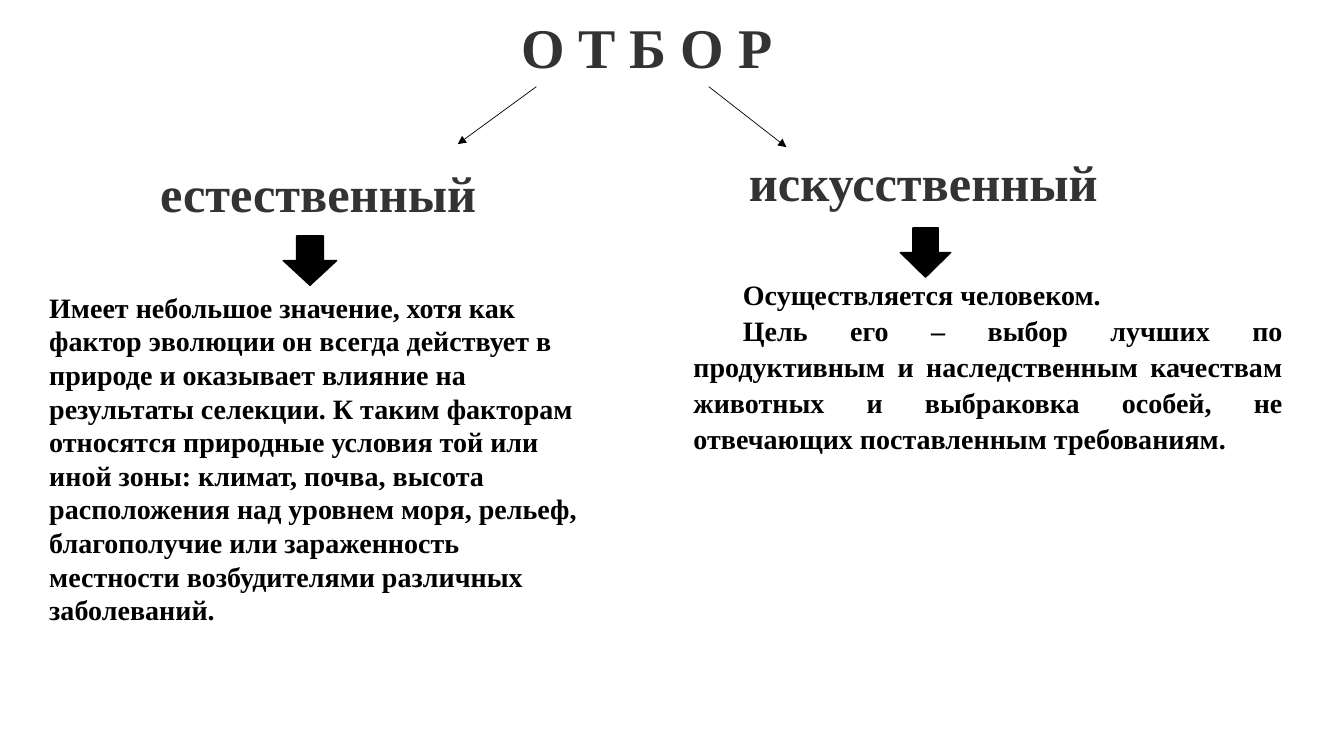
from lxml import etree
from pptx import Presentation
from pptx.dml.color import RGBColor
from pptx.enum import shapes, text
from pptx.oxml.ns import qn
from pptx.util import Inches, Pt

# Content: boxes are (left, top, width, height) in inches
TITLE = ("О Т Б О Р", (5.07, 0.08, 2.72, 0.77))
BRANCHES = [
    {
        "name": "естественный",
        "name_box": (1.49, 1.56, 3.37, 0.71),
        "link": (5.32, 0.86, 4.54, 1.43),
        "arrow": (2.81, 2.34, 0.53, 0.49),
        "body_box": (0.39, 2.83, 5.57, 3.47),
        "justified": False,
        "body": [
            "Имеет небольшое значение, хотя как фактор эволюции он всегда "
            "действует в природе и оказывает влияние на результаты селекции. "
            "К таким факторам относятся природные условия той или иной зоны: "
            "климат, почва, высота расположения над уровнем моря, рельеф, "
            "благополучие или зараженность местности возбудителями различных "
            "заболеваний.",
        ],
    },
    {
        "name": "искусственный",
        "name_box": (7.33, 1.45, 3.7, 0.71),
        "link": (7.03, 0.86, 7.8, 1.46),
        "arrow": (8.93, 2.26, 0.5, 0.49),
        "body_box": (6.78, 2.68, 6.04, 1.88),
        "justified": True,
        "body": [
            "Осуществляется человеком.",
            "Цель его – выбор лучших по продуктивным и наследственным "
            "качествам животных и выбраковка особей, не отвечающих "
            "поставленным требованиям.",
        ],
    },
]

THEME = {
    "font": "Times New Roman",
    "heading": RGBColor(0x33, 0x33, 0x33),
    "ink": RGBColor(0, 0, 0),
    "title_size": Pt(40),
    "name_size": Pt(36),
    "body_size": Pt(20),
    "link_width": Pt(0.5),
    "arrow_width": Pt(1),
    "indent": Inches(0.49),
    "spacing": 1.07,
}


def inches(values):
    return [Inches(v) for v in values]


def add_text(slide, lines, box, size, color, wrap=False, justified=False):
    tf = slide.shapes.add_textbox(*inches(box)).text_frame
    tf.word_wrap = wrap
    tf.auto_size = text.MSO_AUTO_SIZE.SHAPE_TO_FIT_TEXT
    tf.text = "\n".join(lines)
    for p in tf.paragraphs:
        p.font.name, p.font.size, p.font.bold = THEME["font"], size, True
        p.font.color.rgb = color
        if justified:
            p.alignment = text.PP_ALIGN.JUSTIFY
            p.line_spacing = THEME["spacing"]
            pPr = p._p.get_or_add_pPr()
            pPr.set("marL", "0")
            pPr.set("indent", str(THEME["indent"]))


def add_link(slide, ends):
    link = slide.shapes.add_connector(shapes.MSO_CONNECTOR.STRAIGHT, *inches(ends))
    link.line.color.rgb = THEME["ink"]
    link.line.width = THEME["link_width"]
    etree.SubElement(link.line._get_or_add_ln(), qn("a:tailEnd"), type="triangle")
    etree.SubElement(link._element.spPr, qn("a:effectLst"))


def add_down_arrow(slide, box):
    sp = slide.shapes.add_shape(shapes.MSO_SHAPE.DOWN_ARROW, *inches(box))
    sp.shadow.inherit = False
    sp.fill.solid()
    sp.fill.fore_color.rgb = THEME["ink"]
    sp.line.color.rgb = THEME["ink"]
    sp.line.width = THEME["arrow_width"]


def main():
    prs = Presentation()
    prs.slide_width, prs.slide_height = Inches(13.33), Inches(7.5)
    slide = prs.slides.add_slide(prs.slide_layouts[6])

    # Title
    title, box = TITLE
    add_text(slide, [title], box, THEME["title_size"], THEME["heading"])

    # Two kinds of selection
    for branch in BRANCHES:
        add_link(slide, branch["link"])
        add_text(slide, [branch["name"]], branch["name_box"],
                 THEME["name_size"], THEME["heading"])
        add_down_arrow(slide, branch["arrow"])
        add_text(slide, branch["body"], branch["body_box"], THEME["body_size"],
                 THEME["ink"], wrap=True, justified=branch["justified"])

    prs.save("out.pptx")


if __name__ == "__main__":
    main()
